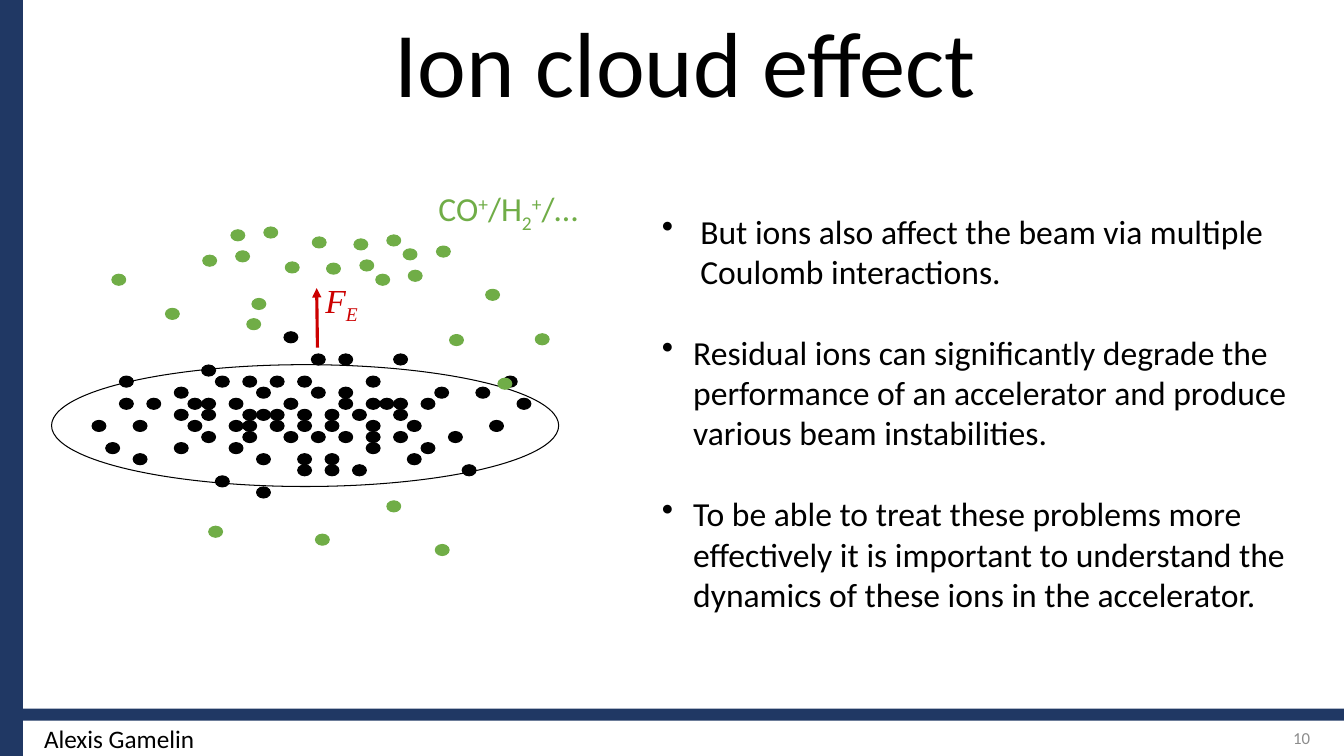
from dataclasses import dataclass

from lxml.etree import SubElement
from pptx import Presentation
from pptx.dml.color import RGBColor
from pptx.enum.shapes import MSO_CONNECTOR, MSO_SHAPE
from pptx.enum.text import MSO_ANCHOR, MSO_AUTO_SIZE, PP_ALIGN
from pptx.oxml.ns import qn
from pptx.util import Cm, Pt


@dataclass(frozen=True)
class Theme:
    navy: str = "203864"
    black: str = "000000"
    green: str = "70AD47"
    red: str = "CC0000"
    grey: str = "8C8C8C"
    font: str = "Calibri"
    math_font: str = "Times New Roman"
    title: int = 66
    body: int = 24
    footer: int = 18
    number: int = 12


theme = Theme()

prs = Presentation()
prs.slide_width, prs.slide_height = Cm(33.87), Cm(19.05)
s = prs.slides.add_slide(prs.slide_layouts[5])


def write(tf, *paragraphs, size=theme.body, color=theme.black, font=theme.font,
          italic=False, align=PP_ALIGN.LEFT, anchor=MSO_ANCHOR.TOP, wrap=True,
          line_spacing=None, gap=0, indents=()):
    """Fill a text frame; a paragraph is a list of (text, baseline in %) runs.

    Each value in indents gives its paragraph a hanging bullet, in cm.
    """
    tf.auto_size = MSO_AUTO_SIZE.NONE
    tf.word_wrap = wrap
    tf.vertical_anchor = anchor
    for i, runs in enumerate(paragraphs):
        p = tf.add_paragraph() if i else tf.paragraphs[0]
        p.alignment = align
        p.space_before = Pt(gap if i else 0)
        if line_spacing:
            p.line_spacing = line_spacing
        if indents:
            pPr = p._p.get_or_add_pPr()
            pPr.set("marL", str(Cm(indents[i])))
            pPr.set("indent", str(-Cm(indents[i])))
            SubElement(pPr, qn("a:buChar"), char="•")
        for text, baseline in runs:
            r = p.add_run()
            r.text = text
            r.font.size, r.font.name, r.font.italic = Pt(size), font, italic
            r.font.color.rgb = RGBColor.from_string(color)
            if baseline:
                r._r.get_or_add_rPr().set("baseline", str(baseline * 1000))


def add_shape(kind, x, y, w, h, fill=None, line=None):
    sp = s.shapes.add_shape(kind, Cm(x), Cm(y), Cm(w), Cm(h))
    sp.shadow.inherit = False
    if fill:
        sp.fill.solid()
        sp.fill.fore_color.rgb = RGBColor.from_string(fill)
    else:
        sp.fill.background()
    if line:
        sp.line.color.rgb = RGBColor.from_string(line)
        sp.line.width = Pt(0.75)
    else:
        sp.line.fill.background()


# Frame, title and footer
add_shape(MSO_SHAPE.RECTANGLE, 0, 17.86, 33.87, 0.3, fill=theme.navy)
add_shape(MSO_SHAPE.RECTANGLE, 0, 0, 0.58, 19.05, fill=theme.navy)

title = s.shapes.title
title.left, title.top, title.width, title.height = Cm(1.27), Cm(0.71), Cm(32), Cm(2.39)
write(title.text_frame, [("Ion cloud effect", 0)], size=theme.title,
      align=PP_ALIGN.CENTER, anchor=MSO_ANCHOR.BOTTOM, line_spacing=0.9)

number = s.shapes.add_textbox(Cm(25.65), Cm(18.08), Cm(7.62), Cm(1.02))
write(number.text_frame, [("10", 0)], size=theme.number, color=theme.grey,
      align=PP_ALIGN.RIGHT, anchor=MSO_ANCHOR.MIDDLE)
author = s.shapes.add_textbox(Cm(0.86), Cm(18.11), Cm(9.12), Cm(1.02))
write(author.text_frame, [("Alexis Gamelin", 0)], size=theme.footer)

# Beam: electrons sit on a regular grid, listed as row -> columns
DOT_W, DOT_H = 0.35, 0.28
GRID_LEFT, GRID_TOP = 2.32, 8.36
COLUMN_STEP, ROW_STEP = 10.71 / 31, 3.91 / 14
electrons = {
    0: [14],
    2: [16, 18, 22],
    3: [8],
    4: [2, 9, 11, 13, 15, 20, 30],
    5: [6, 12, 16, 18, 25, 28],
    6: [2, 4, 7, 8, 10, 14, 18, 20, 21, 22, 24, 31],
    7: [6, 8, 11, 12, 13, 15, 17, 19, 22],
    8: [0, 3, 7, 10, 11, 13, 15, 17, 20, 23, 29],
    9: [8, 11, 14, 16, 18, 20, 22, 26],
    10: [1, 6, 10, 20, 24],
    11: [3, 12, 15, 17, 23],
    12: [15, 17, 19, 27],
    13: [9],
    14: [12],
}
add_shape(MSO_SHAPE.OVAL, 1.3, 9.19, 12.78, 3.07, line=theme.black)
for row, columns in electrons.items():
    for column in columns:
        add_shape(MSO_SHAPE.OVAL, GRID_LEFT + column * COLUMN_STEP,
                  GRID_TOP + row * ROW_STEP, DOT_W, DOT_H, theme.black, theme.black)

# Electric force on one electron
force = s.shapes.add_connector(MSO_CONNECTOR.STRAIGHT, Cm(8), Cm(8.76), Cm(7.98), Cm(7.26))
force.line.color.rgb = RGBColor.from_string(theme.red)
force.line.width = Pt(2.25)
SubElement(force.line._get_or_add_ln(), qn("a:tailEnd"), type="triangle")
SubElement(force._element.spPr, qn("a:effectLst"))
force_label = s.shapes.add_textbox(Cm(7.95), Cm(6.93), Cm(1.37), Cm(1.27))
write(force_label.text_frame, [("F", 0), ("E", -25)], color=theme.red,
      font=theme.math_font, italic=True, wrap=False)

# Ion cloud
ions = [
    (9.47, 6.91), (10.16, 6.27), (10.29, 6.81), (11, 6.2), (8.23, 6.63),
    (8.92, 6.02), (9.07, 6.55), (9.75, 5.92), (11.33, 8.43), (6.22, 8.03),
    (7.19, 6.6), (7.87, 5.97), (5.11, 6.43), (5.82, 5.79), (5.94, 6.32),
    (6.65, 5.72), (6.35, 7.52), (12.24, 7.29), (13.49, 8.41), (12.55, 9.53),
    (9.75, 12.62), (5.26, 13.26), (10.97, 13.72), (7.95, 13.46),
    (4.17, 7.77), (2.82, 6.91),
]
for x, y in ions:
    add_shape(MSO_SHAPE.OVAL, x, y, DOT_W, DOT_H, theme.green, theme.green)
ion_label = s.shapes.add_textbox(Cm(10.8), Cm(4.62), Cm(7.04), Cm(1.27))
write(ion_label.text_frame,
      [("CO", 0), ("+", 30), ("/H", 0), ("2", -25), ("+", 30), ("/…", 0)],
      color=theme.green)

# Consequences
body = s.shapes.add_textbox(Cm(16.43), Cm(5.18), Cm(16.28), Cm(11.53))
write(
    body.text_frame,
    [("But ions also affect the beam via multiple Coulomb interactions.", 0)],
    [("Residual ions can significantly degrade the performance of an accelerator "
      "and produce various beam instabilities.", 0)],
    [("To be able to treat these problems more effectively it is important to "
      "understand the dynamics of these ions in the accelerator.", 0)],
    gap=29, indents=(0.97, 0.79, 0.79),
)

prs.save("out.pptx")
